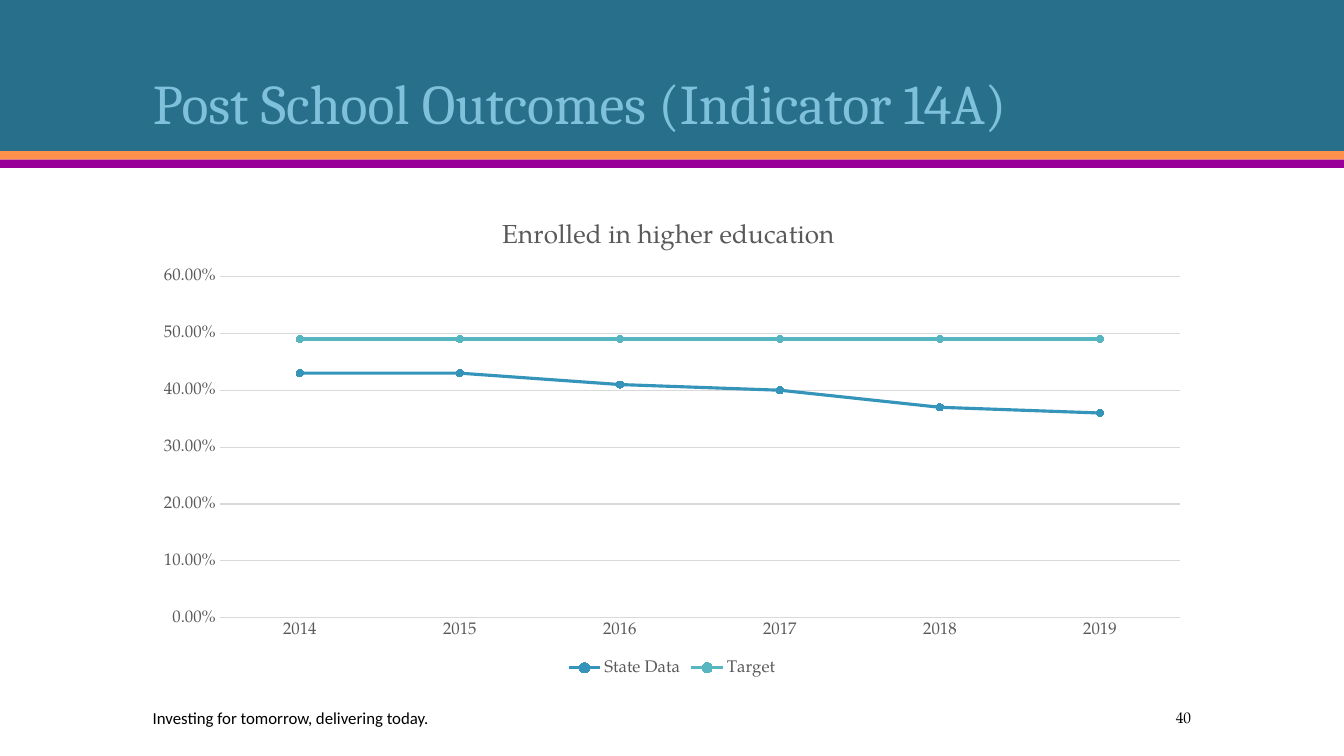
from dataclasses import dataclass

from pptx import Presentation
from pptx.chart.data import CategoryChartData
from pptx.dml.color import RGBColor
from pptx.enum.chart import XL_CHART_TYPE, XL_LEGEND_POSITION, XL_MARKER_STYLE, XL_TICK_MARK
from pptx.enum.shapes import MSO_SHAPE
from pptx.enum.text import MSO_ANCHOR, MSO_AUTO_SIZE, PP_ALIGN
from pptx.util import Pt

LINE_MARKERS = XL_CHART_TYPE.LINE_MARKERS
LEGEND_BOTTOM = XL_LEGEND_POSITION.BOTTOM
CIRCLE = XL_MARKER_STYLE.CIRCLE
NO_TICK = XL_TICK_MARK.NONE
RECT = MSO_SHAPE.RECTANGLE
BOTTOM, MIDDLE = MSO_ANCHOR.BOTTOM, MSO_ANCHOR.MIDDLE
ALIGN_LEFT, ALIGN_RIGHT = PP_ALIGN.LEFT, PP_ALIGN.RIGHT
NO_FIT = MSO_AUTO_SIZE.NONE
EMU_PER_PX = 9525
WIDTH, HEIGHT = 1280, 720
LEFT, CONTENT_W = 136, 1008


@dataclass(frozen=True)
class Theme:
    banner: str = "276F8B"
    orange: str = "FF914D"
    purple: str = "990099"
    title: str = "7FC1DB"
    text: str = "000000"
    chart_text: str = "595959"
    grid: str = "D9D9D9"
    series: tuple = ("3494BA", "58B6C0")
    title_font: str = "Cambria"
    body_font: str = "TeX Gyre Pagella"
    footer_font: str = "Calibri"
    title_size: float = 40
    chart_title_size: float = 18.6
    label_size: float = 12
    number_size: float = 11


THEME = Theme()
YEARS = ["2014", "2015", "2016", "2017", "2018", "2019"]
RATES = {
    "State Data": [0.43, 0.43, 0.41, 0.40, 0.37, 0.36],
    "Target": [0.49] * len(YEARS),
}


def px(*values):
    return [v * EMU_PER_PX for v in values]


def style_font(font, name, size, color):
    font.name = name
    font.size = Pt(size)
    font.bold = False
    font.color.rgb = RGBColor.from_string(color)


def style_line(line, color, width):
    line.color.rgb = RGBColor.from_string(color)
    line.width = Pt(width)


def add_band(s, top, height, color):
    sp = s.shapes.add_shape(RECT, *px(0, top, WIDTH, height))
    sp.shadow.inherit = False
    sp.fill.solid()
    sp.fill.fore_color.rgb = RGBColor.from_string(color)
    sp.line.fill.background()


def write(tf, text, font, size, color, anchor, align=ALIGN_LEFT):
    tf.word_wrap = True
    tf.auto_size = NO_FIT
    tf.vertical_anchor = anchor
    p = tf.paragraphs[0]
    p.alignment = align
    r = p.add_run()
    r.text = text
    style_font(r.font, font, size, color)
    return p


def add_title(s, text):
    sp = s.shapes.title
    sp.left, sp.top, sp.width, sp.height = px(LEFT, 27, CONTENT_W, 108)
    p = write(sp.text_frame, text, THEME.title_font, THEME.title_size, THEME.title, BOTTOM)
    p.line_spacing = 0.9


def add_footer(s, text, left, width, font, size, align):
    sp = s.shapes.add_textbox(*px(left, 669, width, 29))
    write(sp.text_frame, text, font, size, THEME.text, MIDDLE, align)


def add_line_chart(s, title, categories, series_values):
    data = CategoryChartData(number_format="0.00%")
    data.categories = categories
    for name, values in series_values.items():
        data.add_series(name, values)
    chart = s.shapes.add_chart(LINE_MARKERS, *px(LEFT, 192, CONTENT_W, 456), data).chart
    style_font(chart.font, THEME.body_font, THEME.label_size, THEME.chart_text)

    # Title and legend
    chart.has_title = True
    r = chart.chart_title.text_frame.paragraphs[0].add_run()
    r.text = title
    style_font(r.font, THEME.body_font, THEME.chart_title_size, THEME.chart_text)
    chart.chart_title.include_in_layout = False
    chart.has_legend = True
    chart.legend.position = LEGEND_BOTTOM
    chart.legend.include_in_layout = False
    style_font(chart.legend.font, THEME.body_font, THEME.label_size, THEME.chart_text)

    # Axes
    for axis in (chart.category_axis, chart.value_axis):
        axis.major_tick_mark = axis.minor_tick_mark = NO_TICK
        style_font(axis.tick_labels.font, THEME.body_font, THEME.label_size, THEME.chart_text)
    style_line(chart.category_axis.format.line, THEME.grid, 0.75)
    rates = chart.value_axis
    rates.minimum_scale, rates.maximum_scale, rates.major_unit = 0, 0.6, 0.1
    rates.tick_labels.number_format = "0.00%"
    rates.tick_labels.number_format_is_linked = False
    rates.format.line.fill.background()
    style_line(rates.major_gridlines.format.line, THEME.grid, 0.75)

    # Series
    chart.plots[0].vary_by_categories = False
    for series, color in zip(chart.plots[0].series, THEME.series):
        series.smooth = False
        style_line(series.format.line, color, 2.25)
        marker = series.marker
        marker.style, marker.size = CIRCLE, 5
        marker.format.fill.solid()
        marker.format.fill.fore_color.rgb = RGBColor.from_string(color)
        style_line(marker.format.line, color, 0.75)


def main():
    prs = Presentation()
    prs.slide_width, prs.slide_height = px(WIDTH, HEIGHT)
    title_only = prs.slide_layouts[5]
    s = prs.slides.add_slide(title_only)

    # Banner, with the title raised in front of it
    add_band(s, 0, 144, THEME.banner)
    add_band(s, 144, 8, THEME.orange)
    add_band(s, 152, 8, THEME.purple)
    s.shapes._spTree.append(s.shapes.title._element)
    add_title(s, "Post School Outcomes (Indicator 14A)")

    # Enrolment chart
    add_line_chart(s, "Enrolled in higher education ", YEARS, RATES)

    # Footer
    add_footer(s, "Investing for tomorrow, delivering today.", LEFT, 656,
               THEME.footer_font, THEME.label_size, ALIGN_LEFT)
    add_footer(s, "40", 1000, 144, THEME.body_font, THEME.number_size, ALIGN_RIGHT)
    prs.save("out.pptx")


if __name__ == "__main__":
    main()
